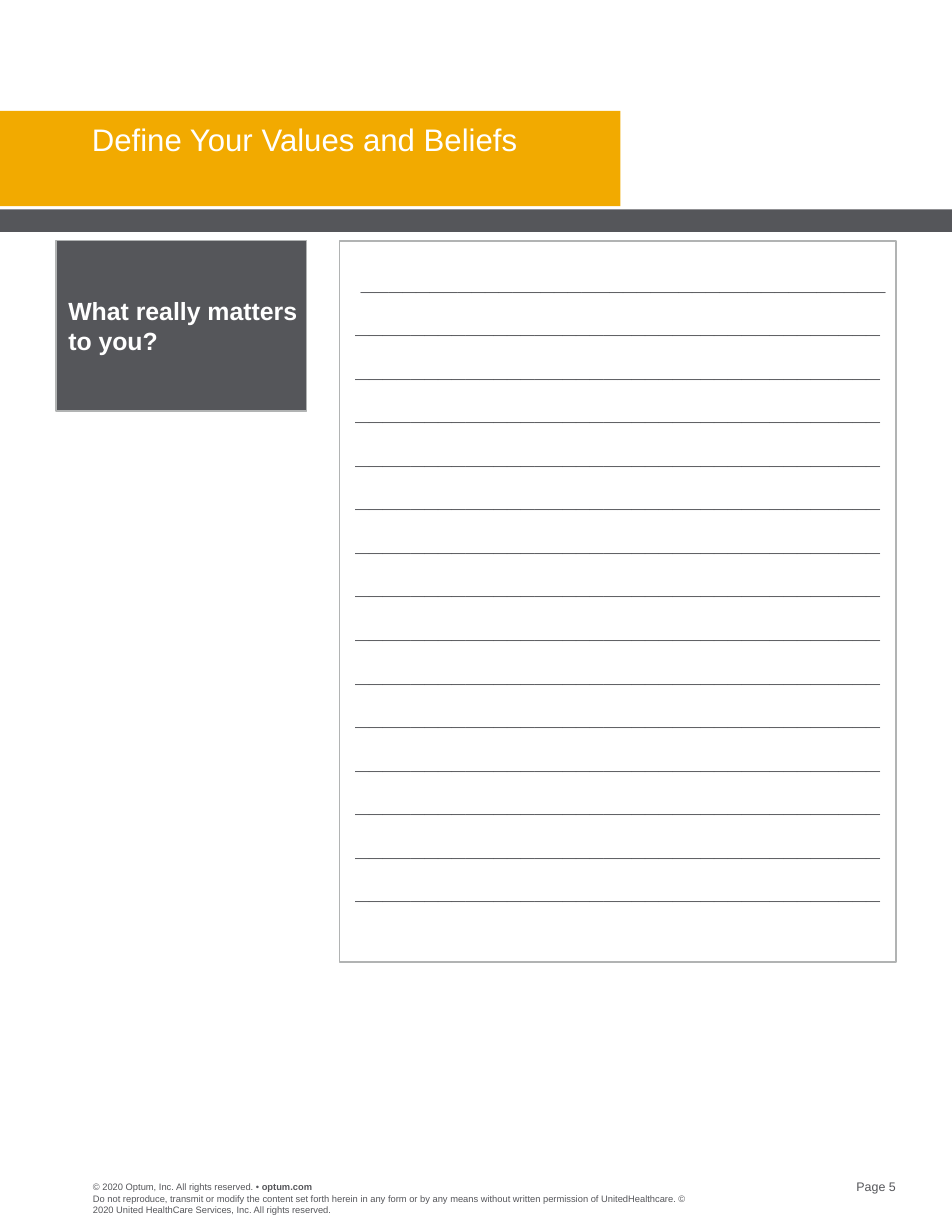
from pptx import Presentation
from pptx.dml.color import RGBColor
from pptx.enum.shapes import MSO_SHAPE as Preset
from pptx.enum.text import MSO_ANCHOR as Anchor, MSO_AUTO_SIZE as AutoSize, PP_ALIGN as Align
from pptx.oxml.ns import qn
from pptx.util import Inches, Pt

COLUMNS, ROWS = 17, 22
AMBER, SLATE, SILVER, WHITE = "F2AA00", "55565A", "B1B3B3", "FFFFFF"
RULE_COUNT, RULE_LENGTH = 15, 38


def colour(code):
    """Turn a hex string into a colour."""
    return RGBColor.from_string(code)


class Worksheet:
    """Hold the style and the slide, placing parts on a 17 by 22 grid."""

    font_name = "Arial"

    def __init__(self, deck):
        """Open a slide with a title and two bodies."""
        self.cell_width = deck.slide_width / COLUMNS
        self.cell_height = deck.slide_height / ROWS
        self.slide = deck.slides.add_slide(deck.slide_layouts[3])

    def area(self, column, row, columns, rows):
        """Convert a grid area to slide lengths."""
        return (round(column * self.cell_width), round(row * self.cell_height),
                round(columns * self.cell_width), round(rows * self.cell_height))

    def band(self, area, fill):
        """Draw a plain filled band."""
        band = self.slide.shapes.add_shape(Preset.RECTANGLE, *self.area(*area))
        band.shadow.inherit = False
        band.fill.solid()
        band.fill.fore_color.rgb = colour(fill)
        band.line.fill.background()

    def style_run(self, run, size, ink, bold=False):
        """Format one run."""
        run.font.name, run.font.size, run.font.bold = self.font_name, Pt(size), bold
        run.font.color.rgb = colour(ink)

    def fill_text(self, frame, text, size, ink, bold=False, align=Align.LEFT,
                  anchor=Anchor.TOP, left=0, top=0):
        """Set the text of a frame and format all its runs."""
        frame.text = text
        frame.word_wrap = True
        frame.auto_size = AutoSize.NONE
        frame.vertical_anchor = anchor
        frame.margin_left, frame.margin_top = Inches(left), Inches(top)
        frame.margin_right = frame.margin_bottom = 0
        for paragraph in frame.paragraphs:
            paragraph.alignment = align
            paragraph.space_before = 0
            for run in paragraph.runs:
                self.style_run(run, size, ink, bold)

    def note(self, area, text, size, align=Align.LEFT):
        """Add a small footer text and return its paragraph."""
        box = self.slide.shapes.add_textbox(*self.area(*area))
        self.fill_text(box.text_frame, text, size, SLATE, align=align)
        return box.text_frame.paragraphs[0]

    def placeholder(self, index, area, text, size, ink, **style):
        """Move a placeholder in front of the bands and fill it."""
        holder = self.slide.placeholders[index]
        holder.left, holder.top, holder.width, holder.height = self.area(*area)
        self.slide.shapes.element.append(holder.element)
        self.fill_text(holder.text_frame, text, size, ink, **style)
        for paragraph in holder.text_frame.paragraphs:
            properties = paragraph._p.get_or_add_pPr()
            properties.set("marL", "0")
            properties.set("indent", "0")
            properties.append(properties.makeelement(qn("a:buNone"), {}))
        return holder

    def outline(self, holder, width):
        """Give a placeholder a thin silver border."""
        holder.line.color.rgb = colour(SILVER)
        holder.line.width = Pt(width)


def main():
    """Build the values worksheet."""
    deck = Presentation()
    deck.slide_width, deck.slide_height = Inches(8.5), Inches(11)
    sheet = Worksheet(deck)

    sheet.band((0, 1.98, 11.08, 1.7), AMBER)
    sheet.band((0, 3.74, COLUMNS, 0.4), SLATE)

    title = sheet.placeholder(0, (1.64, 2.22, 9, 1.22), "Define Your Values and Beliefs", 20, WHITE)
    title.text_frame.paragraphs[0].line_spacing = 0.9

    rules = "\n".join(["_" * RULE_LENGTH] * RULE_COUNT)
    answers = sheet.placeholder(1, (6.06, 4.3, 9.94, 12.88), rules, 16, SLATE,
                                bold=True, align=Align.CENTER, top=0.22)
    sheet.outline(answers, 1)
    first, *others = answers.text_frame.paragraphs
    first._p.get_or_add_pPr().set("marL", str(Inches(0.1)))
    for rule in others:
        rule.space_before = Pt(8.8)

    question = sheet.placeholder(2, (1, 4.3, 4.48, 3.04), "What really matters\vto you?", 16, WHITE,
                                 bold=True, anchor=Anchor.MIDDLE, left=0.11)
    question.fill.solid()
    question.fill.fore_color.rgb = colour(SLATE)
    sheet.outline(question, 0.75)

    rights = sheet.note((1.66, 21.1, 4.4, 0.2), "© 2020 Optum, Inc. All rights reserved. • ", 6)
    site = rights.add_run()
    site.text = "optum.com"
    sheet.style_run(site, 6, SLATE, bold=True)
    sheet.note((1.66, 21.3, 10.6, 0.4),
               "Do not reproduce, transmit or modify the content set forth herein in any form "
               "or by any means without written permission of UnitedHealthcare. "
               "© 2020 United HealthCare Services, Inc. All rights reserved.", 6)
    sheet.note((14.38, 21.06, 1.62, 0.26), "Page 5", 8, Align.RIGHT)

    deck.save("out.pptx")


if __name__ == "__main__":
    main()
